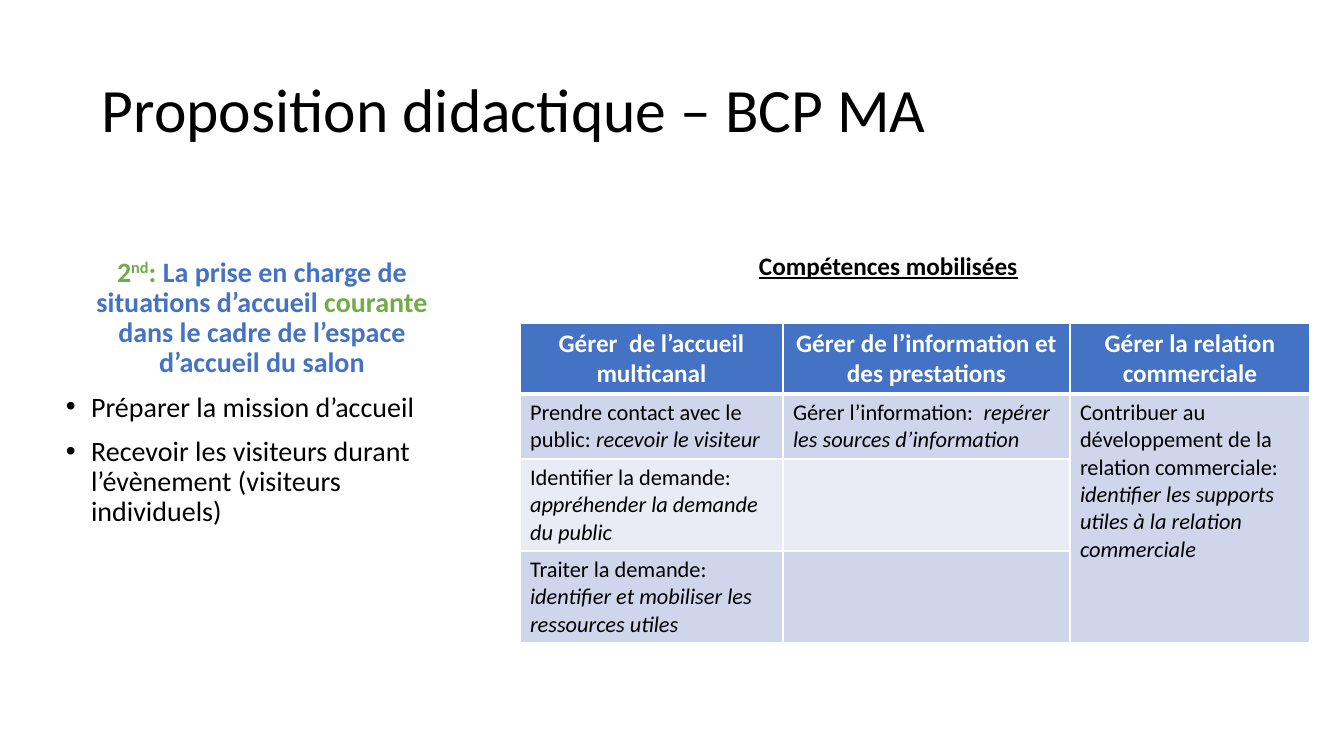
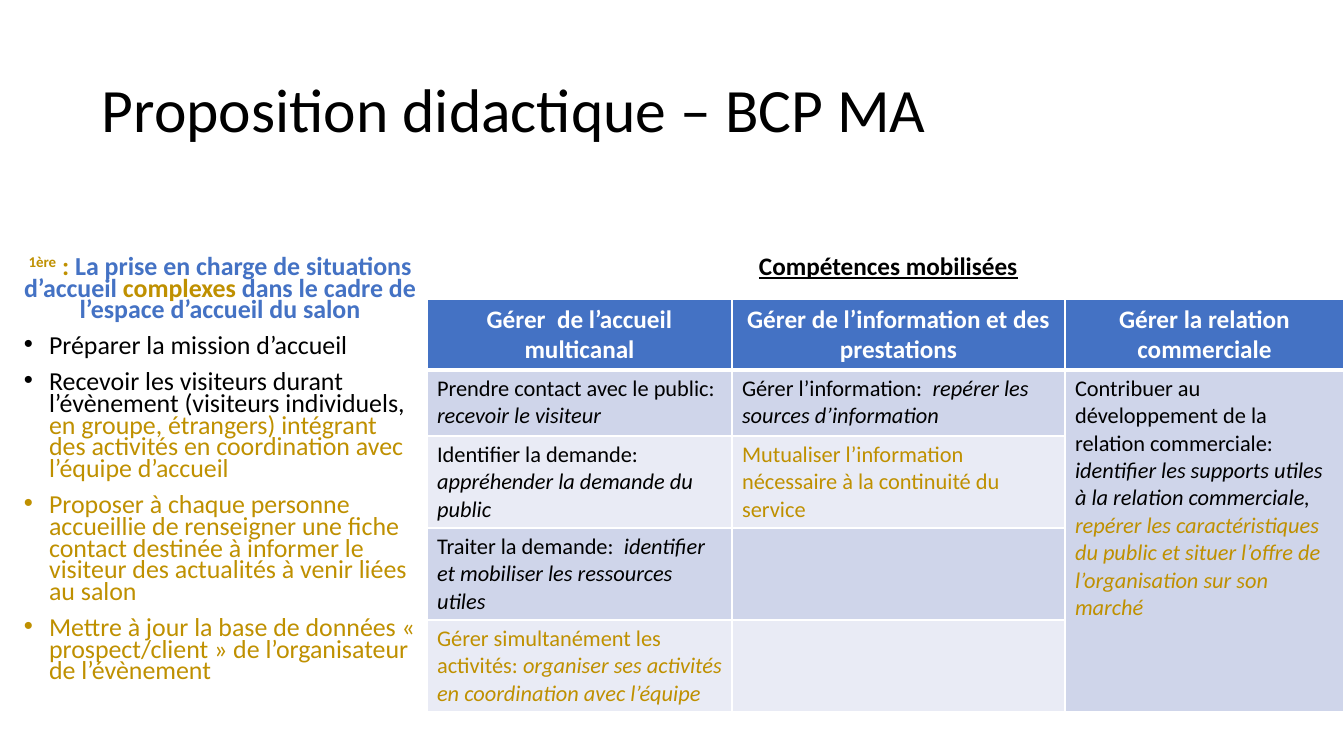
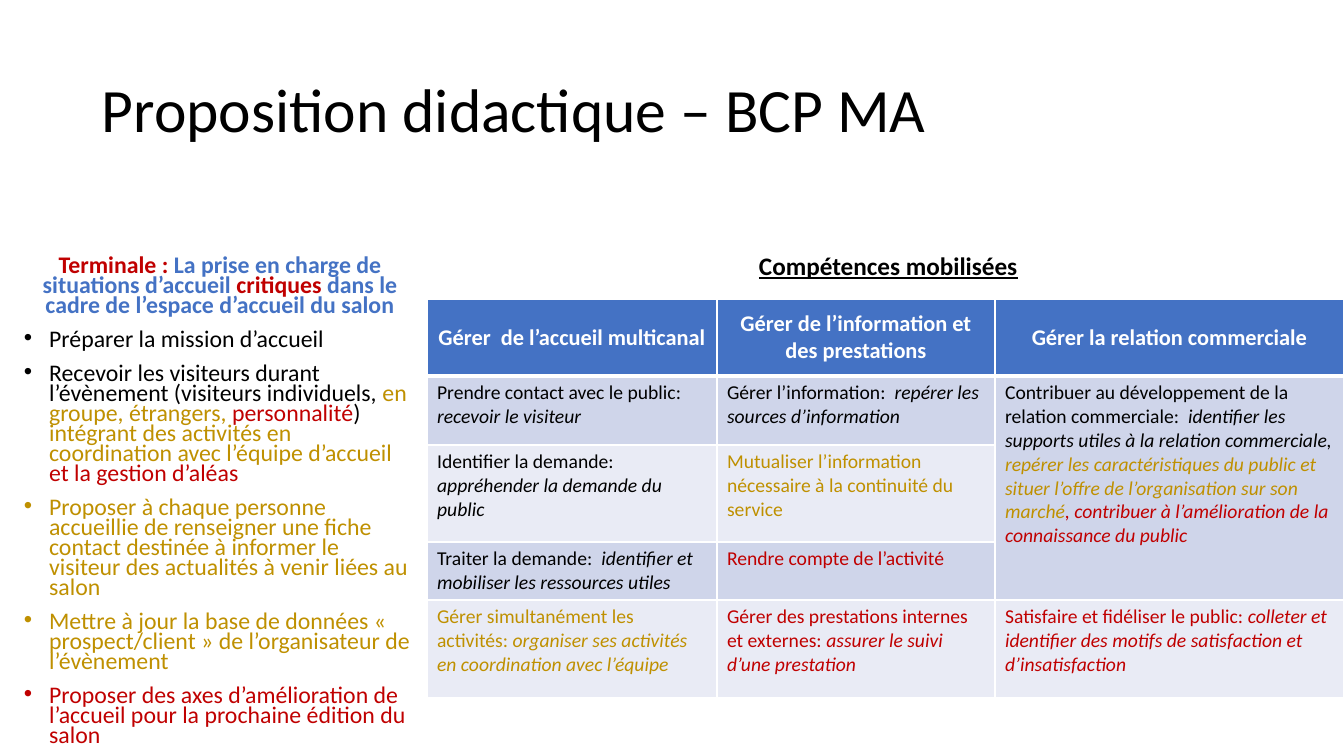
from lxml import etree
from pptx import Presentation
from pptx.dml.color import RGBColor
from pptx.enum.text import MSO_ANCHOR as ANCHOR, PP_ALIGN as ALIGN
from pptx.oxml.ns import qn
from pptx.util import Pt

SLIDE_W, SLIDE_H = 1344, 756
EMU_PER_PX = 12192000 / SLIDE_W
FONT = "Calibri"

BLACK = RGBColor(0x00, 0x00, 0x00)
WHITE = RGBColor(0xFF, 0xFF, 0xFF)
BLUE = RGBColor(0x44, 0x72, 0xC4)
GREEN = RGBColor(0x70, 0xAD, 0x47)
GOLD = RGBColor(0xBF, 0x90, 0x00)
RED = RGBColor(0xC0, 0x00, 0x00)
BANDS = (RGBColor(0xCF, 0xD5, 0xEA), RGBColor(0xE9, 0xEB, 0xF5))

BOLD = {"bold": True}
ITALIC = {"italic": True}
SUPER = {"bold": True, "baseline": 30000}

TITLE = "Proposition didactique – BCP MA"
SKILLS = "Compétences mobilisées"
HEADERS = ("Gérer  de l’accueil multicanal",
           "Gérer de l’information et des prestations",
           "Gérer la relation commerciale")


def px(n):
    return round(n * EMU_PER_PX)


def add_run(p, size, text, colour=BLACK, style=None):
    style = dict(style or {})
    baseline = style.pop("baseline", None)
    r = p.add_run()
    r.text = text
    for name, value in {"name": FONT, "size": Pt(size), **style}.items():
        setattr(r.font, name, value)
    r.font.color.rgb = colour
    if baseline:
        r._r.get_or_add_rPr().set("baseline", str(baseline))


def fill_paragraph(p, size, runs, **formats):
    for name, value in formats.items():
        setattr(p, name, value)
    for run in runs:
        add_run(p, size, *run)


def add_box(slide, left, top, width, height, wrap=True, anchor=ANCHOR.TOP):
    tf = slide.shapes.add_textbox(px(left), px(top), px(width), px(height)).text_frame
    tf.word_wrap = wrap
    tf.vertical_anchor = anchor
    return tf


def set_bullet(p):
    pPr = p._p.get_or_add_pPr()
    pPr.set("marL", "228600")
    pPr.set("indent", "-228600")
    etree.SubElement(pPr, qn("a:buFont")).set("typeface", "Arial")
    etree.SubElement(pPr, qn("a:buChar")).set("char", "•")


def add_outline(slide, left, size, spacing, heading, bullets):
    """Centred heading followed by bulleted paragraphs."""
    tf = add_box(slide, left, 253, 412, 486)
    formats = {"line_spacing": spacing, "space_before": Pt(10)}
    fill_paragraph(tf.paragraphs[0], size, heading, alignment=ALIGN.CENTER, **formats)
    for runs in bullets:
        p = tf.add_paragraph()
        fill_paragraph(p, size, runs, **formats)
        set_bullet(p)


def set_borders(cell, top, bottom):
    tcPr = cell._tc.get_or_add_tcPr()
    for side, width in (("L", 1), ("R", 1), ("T", top), ("B", bottom)):
        ln = etree.SubElement(tcPr, qn(f"a:ln{side}"), w=str(Pt(width)))
        fill = etree.SubElement(ln, qn("a:solidFill"))
        etree.SubElement(fill, qn("a:srgbClr"), val=str(WHITE))


def add_skills_table(slide, left, top, widths, heights, size, rows):
    """Cells hold runs; None continues the cell above."""
    header = [[(text, WHITE, BOLD)] for text in HEADERS]
    grid = [header, *rows]
    table = slide.shapes.add_table(len(grid), len(widths), px(left), px(top),
                                   px(sum(widths)), px(sum(heights))).table
    for column, width in zip(table.columns, widths):
        column.width = px(width)
    for row, height in zip(table.rows, heights):
        row.height = px(height)
    for i, row in enumerate(grid):
        for j, runs in enumerate(row):
            cell = table.cell(i, j)
            set_borders(cell, 3 if i == 1 else 1, 3 if i == 0 else 1)
            cell.fill.solid()
            cell.fill.fore_color.rgb = BANDS[(i - 1) % 2] if i else BLUE
            p = cell.text_frame.paragraphs[0]
            if i == 0:
                cell.vertical_anchor = ANCHOR.MIDDLE
                fill_paragraph(p, size + 2, runs, alignment=ALIGN.CENTER)
            else:
                fill_paragraph(p, size, runs or [])
    for j, column in enumerate(zip(*grid)):
        joined = [i for i, runs in enumerate(column) if runs is None]
        if joined:
            table.cell(joined[0] - 1, j).merge(table.cell(joined[-1], j))


def add_level(prs, outline, table):
    slide = prs.slides.add_slide(prs.slide_layouts[6])
    tf = add_box(slide, 92, 40, 1159, 146, anchor=ANCHOR.MIDDLE)
    fill_paragraph(tf.paragraphs[0], 44, [(TITLE,)], line_spacing=0.9)
    add_outline(slide, **outline)
    add_skills_table(slide, **table)
    tf = add_box(slide, 749, 245, 333, 40, wrap=False)
    fill_paragraph(tf.paragraphs[0], 18, [(SKILLS, BLACK, {"bold": True, "underline": True})])


def heading(label, adjective, colour):
    return [*label,
            ("La prise en charge de situations d’accueil ", BLUE, BOLD),
            (adjective, colour, BOLD),
            (" dans le cadre de l’espace d’accueil du salon", BLUE, BOLD)]


def skill(name, detail, colour=BLACK):
    return [(name, colour), (detail, colour, ITALIC)]


PREPARE = [("Préparer la mission d’accueil",)]
RECEIVE = "Recevoir les visiteurs durant l’évènement (visiteurs individuels"
TEAMWORK = "intégrant des activités en coordination avec l’équipe d’accueil"
CONTACT_FORM = [("Proposer à chaque personne accueillie de renseigner une fiche contact "
                 "destinée à informer le visiteur des actualités à venir liées au salon", GOLD)]
DATABASE = [("Mettre à jour la base de données « prospect/client » "
             "de l’organisateur de l’évènement", GOLD)]
IMPROVE = [("Proposer des axes d’amélioration de l’accueil "
            "pour la prochaine édition du salon", RED)]

GREET = skill("Prendre contact avec le public: ", "recevoir le visiteur")
IDENTIFY = skill("Identifier la demande: ", " appréhender la demande du public")
PROCESS = skill("Traiter la demande: ", " identifier et mobiliser les ressources utiles")
MULTITASK = skill("Gérer simultanément les activités: ",
                  "organiser ses activités en coordination avec l’équipe", GOLD)
INFORM = skill("Gérer l’information: ", " repérer les sources d’information")
SHARE = [("Mutualiser l’information nécessaire à la continuité du service", GOLD)]
REPORT = [("Rendre compte de l’activité", RED)]
SERVICES = skill("Gérer des prestations internes et externes: ",
                 "assurer le suivi d’une prestation", RED)
LOYALTY = skill("Satisfaire et fidéliser le public: ",
                "colleter et identifier des motifs de satisfaction et d’insatisfaction", RED)
RELATION = skill("Contribuer au développement de la relation commerciale: ",
                 " identifier les supports utiles à la relation commerciale")
RELATION_GOLD = [*RELATION, (", ", BLACK, ITALIC),
                 ("repérer les caractéristiques du public et situer l’offre "
                  "de l’organisation sur son marché", GOLD, ITALIC)]
RELATION_RED = [*RELATION_GOLD,
                (", contribuer à l’amélioration de la connaissance du public", RED, ITALIC)]


def main():
    prs = Presentation()
    prs.slide_width, prs.slide_height = px(SLIDE_W), px(SLIDE_H)

    add_level(
        prs,
        dict(left=56, size=20, spacing=0.9,
             heading=heading([("2", GREEN, BOLD), ("nd", GREEN, SUPER), (": ", GREEN, BOLD)],
                             "courante", GREEN),
             bullets=[PREPARE, [(RECEIVE + ")",)]]),
        dict(left=520, top=323, widths=(263, 287, 240), heights=(71, 65, 92, 92), size=16,
             rows=[[GREET, INFORM, RELATION],
                   [IDENTIFY, [], None],
                   [PROCESS, [], None]]))

    add_level(
        prs,
        dict(left=14, size=18.5, spacing=0.7,
             heading=heading([("1ère", GOLD, SUPER), (" : ", GOLD, BOLD)], "complexes", GOLD),
             bullets=[PREPARE,
                      [(RECEIVE + ", ",), ("en groupe, étrangers) " + TEAMWORK, GOLD)],
                      CONTACT_FORM, DATABASE]),
        dict(left=427, top=299, widths=(305, 333, 279), heights=(71, 66, 92, 92, 92), size=16,
             rows=[[GREET, INFORM, RELATION_GOLD],
                   [IDENTIFY, SHARE, None],
                   [PROCESS, [], None],
                   [MULTITASK, [], None]]))

    add_level(
        prs,
        dict(left=14, size=17, spacing=0.7,
             heading=heading([("Terminale : ", RED, BOLD)], "critiques", RED),
             bullets=[PREPARE,
                      [(RECEIVE + ", ",), ("en groupe, étrangers, ", GOLD),
                       ("personnalité", RED), (") ",), (TEAMWORK + " ", GOLD),
                       ("et la gestion d’aléas", RED)],
                      CONTACT_FORM, DATABASE, IMPROVE]),
        dict(left=427, top=299, widths=(290, 278, 349), heights=(77, 69, 97, 58, 98), size=14,
             rows=[[GREET, INFORM, RELATION_RED],
                   [IDENTIFY, SHARE, None],
                   [PROCESS, REPORT, None],
                   [MULTITASK, SERVICES, LOYALTY]]))

    prs.save("out.pptx")


if __name__ == "__main__":
    main()
